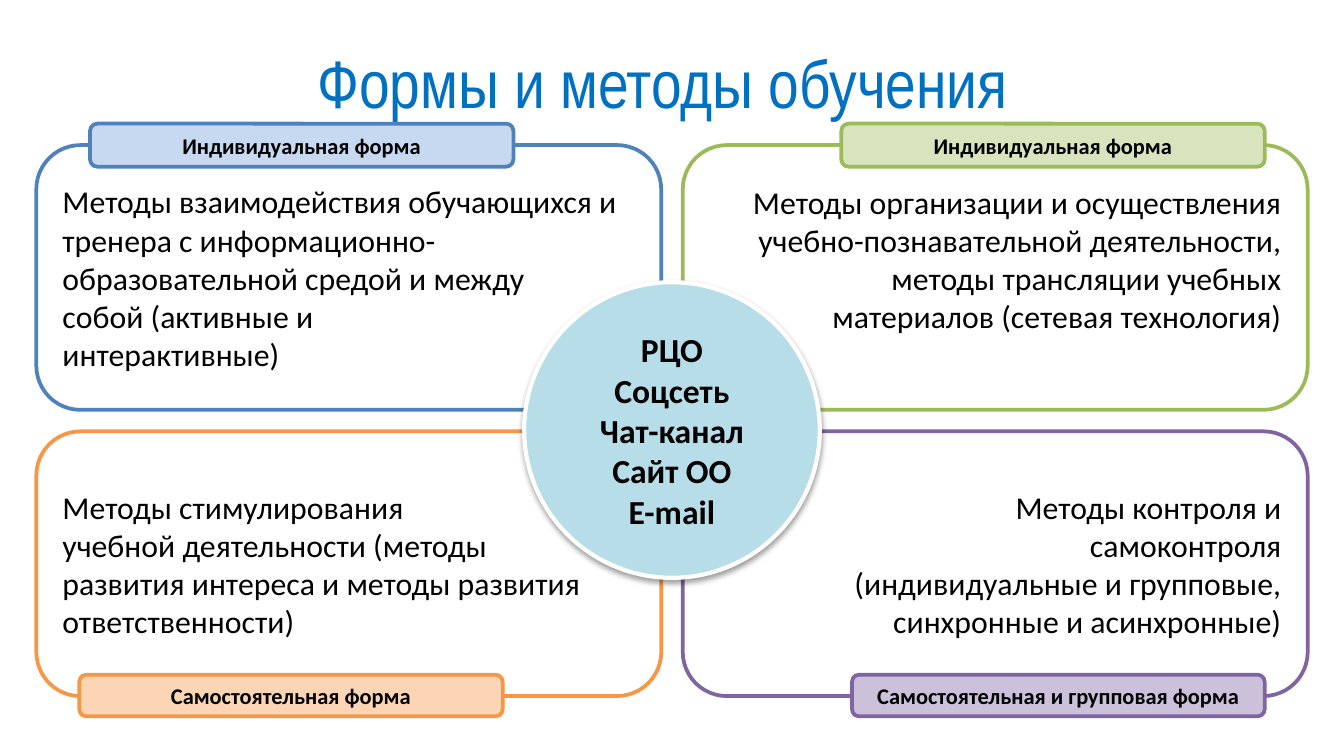
from lxml import etree
from pptx import Presentation
from pptx.dml.color import RGBColor
from pptx.enum.shapes import MSO_SHAPE
from pptx.enum.text import MSO_ANCHOR, PP_ALIGN
from pptx.oxml.ns import qn
from pptx.util import Inches, Pt

LEFT, CENTER, RIGHT = PP_ALIGN.LEFT, PP_ALIGN.CENTER, PP_ALIGN.RIGHT
MIDDLE = MSO_ANCHOR.MIDDLE
ROUNDED, OVAL = MSO_SHAPE.ROUNDED_RECTANGLE, MSO_SHAPE.OVAL

COLORS = {
    "title": "0070C0", "text": "000000", "white": "FFFFFF", "hub": "B7DEE8",
    "blue": "4F81BD", "light blue": "C6D9F1",
    "green": "9BBB59", "light green": "D7E4BD",
    "orange": "F79646", "light orange": "FCD5B5",
    "purple": "8064A2", "light purple": "CCC1DA",
}

TITLE = "Формы и методы обучения"
HUB_LINES = ["РЦО", "Соцсеть", "Чат-канал", "Сайт ОО", "E-mail"]

# Row by row: color, label, label box (left, top, width, height), paragraphs
QUADRANTS = [
    ("blue", "Индивидуальная форма", (0.67, 0.92, 3.15, 0.32), [
        "Методы взаимодействия обучающихся и тренера с "
        "информационно-образовательной средой и между",
        "собой (активные и",
        "интерактивные)",
    ]),
    ("green", "Индивидуальная форма", (6.26, 0.92, 3.15, 0.32), [
        "Методы организации и осуществления учебно-познавательной "
        "деятельности, методы трансляции учебных",
        "материалов (сетевая технология)",
    ]),
    ("orange", "Самостоятельная форма", (0.59, 5.02, 3.15, 0.31), [
        "Методы стимулирования",
        "учебной деятельности (методы",
        "развития интереса и методы развития ответственности)",
    ]),
    ("purple", "Самостоятельная и групповая форма", (6.34, 5.02, 3.07, 0.31), [
        "Методы контроля и",
        "самоконтроля",
        "(индивидуальные и групповые, синхронные и асинхронные)",
    ]),
]

SLIDE_WIDTH = 10
SLIDE_HEIGHT = SLIDE_WIDTH * 9 / 16
PANEL_WIDTH, PANEL_HEIGHT = 4.65, 1.97
PANEL_LEFT, PANEL_TOP, PANEL_GAP = 0.27, 1.08, 0.16
HUB_SIZE, HUB_TOP = 2.2, 2.1
RAISED_TEXT_INSET = 0.33


def write(shape, lines, size, alignment, color="text", bold=False, font="Calibri"):
    frame = shape.text_frame
    frame.word_wrap = True
    frame.vertical_anchor = MIDDLE
    for index, line in enumerate(lines):
        paragraph = frame.add_paragraph() if index else frame.paragraphs[0]
        paragraph.alignment = alignment
        run = paragraph.add_run()
        run.text = line
        run.font.name = font
        run.font.size = Pt(size)
        run.font.bold = bold
        run.font.color.rgb = RGBColor.from_string(COLORS[color])


def add_box(slide, kind, box, fill, line, line_width=2):
    shape = slide.shapes.add_shape(kind, *map(Inches, box))
    shape.shadow.inherit = False
    shape.fill.solid()
    shape.fill.fore_color.rgb = RGBColor.from_string(COLORS[fill])
    shape.line.color.rgb = RGBColor.from_string(COLORS[line])
    shape.line.width = Pt(line_width)
    return shape


def add_soft_shadow(shape):
    effects = shape.element.spPr.find(qn("a:effectLst"))
    shadow = etree.SubElement(
        effects, qn("a:outerShdw"), blurRad=str(Pt(3.1)), dist=str(Pt(1.6)),
        dir="5400000", rotWithShape="0")
    color = etree.SubElement(shadow, qn("a:srgbClr"), val=COLORS["text"])
    etree.SubElement(color, qn("a:alpha"), val="38000")


def main():
    presentation = Presentation()
    presentation.slide_width = Inches(SLIDE_WIDTH)
    presentation.slide_height = Inches(SLIDE_HEIGHT)
    slide = presentation.slides.add_slide(presentation.slide_layouts[6])

    title = slide.shapes.add_textbox(*map(Inches, (0.43, 0.14, 9, 0.94)))
    write(title, [TITLE], 36, CENTER, color="title", font="Arial Narrow")

    for index, (color, _, _, lines) in enumerate(QUADRANTS):
        row, column = divmod(index, 2)
        left = PANEL_LEFT + column * (PANEL_WIDTH + PANEL_GAP)
        top = PANEL_TOP + row * (PANEL_HEIGHT + PANEL_GAP)
        panel = add_box(slide, ROUNDED, (left, top, PANEL_WIDTH, PANEL_HEIGHT),
                        "white", color)
        write(panel, lines, 17, RIGHT if column else LEFT)
        if color == "green":
            panel.text_frame.margin_bottom = Inches(RAISED_TEXT_INSET)

    for color, label, box, _ in QUADRANTS:
        tab = add_box(slide, ROUNDED, box, f"light {color}", color)
        write(tab, [label], 12, CENTER, bold=True)

    hub_left = (SLIDE_WIDTH - HUB_SIZE) / 2
    hub = add_box(slide, OVAL, (hub_left, HUB_TOP, HUB_SIZE, HUB_SIZE),
                  "hub", "white", 2.25)
    add_soft_shadow(hub)
    write(hub, HUB_LINES, 18, CENTER, bold=True)

    presentation.save("out.pptx")


if __name__ == "__main__":
    main()
